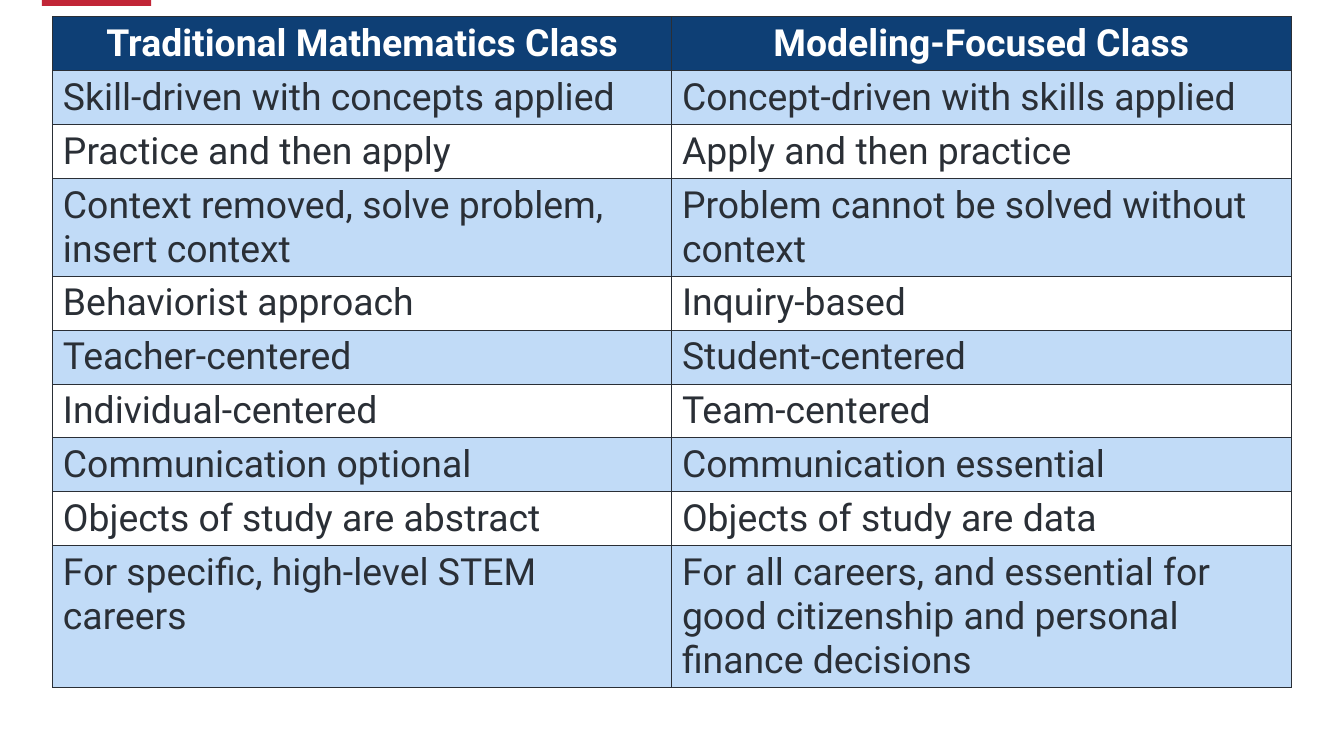
"""Build a slide comparing a traditional and a modeling-focused mathematics class."""
from dataclasses import dataclass

from lxml import etree
from pptx import Presentation
from pptx.dml.color import RGBColor
from pptx.enum.shapes import MSO_SHAPE
from pptx.enum.text import PP_ALIGN
from pptx.oxml.ns import qn
from pptx.slide import Slide
from pptx.table import _Cell
from pptx.util import Emu, Inches, Pt

RECTANGLE = MSO_SHAPE.RECTANGLE
LEFT, CENTER = PP_ALIGN.LEFT, PP_ALIGN.CENTER

SLIDE_WIDTH, SLIDE_HEIGHT = Inches(16), Inches(9)
GRID_COLUMNS, GRID_ROWS = 16, 9
FONT_NAME, FONT_SIZE, BORDER_WIDTH = "Roboto", Pt(32), Pt(1)
LINE_ROWS, MARGIN_COLUMNS, MARGIN_ROWS = 0.52, 0.12, 0.06
COLORS = {"accent": "C12637", "header": "0E3F75", "band": "C1DBF7",
          "white": "FFFFFF", "ink": "2A2F36"}


@dataclass(frozen=True)
class Area:
    left: float
    top: float
    width: float
    height: float


@dataclass(frozen=True)
class RowStyle:
    fill: str
    text: str
    bold: bool = False
    alignment: PP_ALIGN = LEFT


@dataclass(frozen=True)
class Comparison:
    traditional: str
    modeling: str
    lines: int = 1


ACCENT_AREA = Area(0.5, -0.05, 1.3, 0.12)
TABLE_LEFT, TABLE_TOP, TABLE_WIDTH = 0.63, 0.2, 14.74
HEADER_STYLE = RowStyle("header", "white", True, CENTER)
BODY_STYLES = (RowStyle("white", "ink"), RowStyle("band", "ink"))
COMPARISONS = [
    Comparison("Traditional Mathematics Class", "Modeling-Focused Class"),
    Comparison("Skill-driven with concepts applied", "Concept-driven with skills applied"),
    Comparison("Practice and then apply", "Apply and then practice"),
    Comparison("Context removed, solve problem, insert context",
               "Problem cannot be solved without context", 2),
    Comparison("Behaviorist approach", "Inquiry-based"),
    Comparison("Teacher-centered", "Student-centered"),
    Comparison("Individual-centered", "Team-centered"),
    Comparison("Communication optional", "Communication essential"),
    Comparison("Objects of study are abstract", "Objects of study are data"),
    Comparison("For specific, high-level STEM careers",
               "For all careers, and essential for good citizenship "
               "and personal finance decisions", 3),
]


def columns(count: float) -> Emu:
    return Emu(round(SLIDE_WIDTH * count / GRID_COLUMNS))


def rows(count: float) -> Emu:
    return Emu(round(SLIDE_HEIGHT * count / GRID_ROWS))


def color(name: str) -> RGBColor:
    return RGBColor.from_string(COLORS[name])


def row_height(comparison: Comparison) -> float:
    return comparison.lines * LINE_ROWS + 2 * MARGIN_ROWS


def add_accent(slide: Slide, area: Area) -> None:
    shape = slide.shapes.add_shape(RECTANGLE, columns(area.left), rows(area.top),
                                   columns(area.width), rows(area.height))
    shape.shadow.inherit = False
    shape.fill.solid()
    shape.fill.fore_color.rgb = color("accent")
    shape.line.fill.background()


def add_borders(cell: _Cell) -> None:
    properties = cell._tc.get_or_add_tcPr()
    for position, side in enumerate(("lnL", "lnR", "lnT", "lnB")):
        line = etree.Element(qn(f"a:{side}"), w=str(BORDER_WIDTH))
        fill = etree.SubElement(line, qn("a:solidFill"))
        etree.SubElement(fill, qn("a:srgbClr"), val=COLORS["ink"])
        properties.insert(position, line)


def fill_cell(cell: _Cell, text: str, style: RowStyle) -> None:
    cell.margin_left = cell.margin_right = columns(MARGIN_COLUMNS)
    cell.margin_top = cell.margin_bottom = rows(MARGIN_ROWS)
    cell.fill.solid()
    cell.fill.fore_color.rgb = color(style.fill)
    add_borders(cell)
    paragraph = cell.text_frame.paragraphs[0]
    paragraph.alignment = style.alignment
    run = paragraph.add_run()
    run.text = text
    run.font.name = FONT_NAME
    run.font.size = FONT_SIZE
    run.font.bold = style.bold
    run.font.color.rgb = color(style.text)


def add_comparison_table(slide: Slide, comparisons: list[Comparison]) -> None:
    height = sum(row_height(comparison) for comparison in comparisons)
    table = slide.shapes.add_table(len(comparisons), 2, columns(TABLE_LEFT), rows(TABLE_TOP),
                                   columns(TABLE_WIDTH), rows(height)).table
    table.horz_banding = False
    for index, comparison in enumerate(comparisons):
        table.rows[index].height = rows(row_height(comparison))
        style = BODY_STYLES[index % 2] if index else HEADER_STYLE
        for column, text in enumerate((comparison.traditional, comparison.modeling)):
            fill_cell(table.cell(index, column), text, style)


def main() -> None:
    presentation = Presentation()
    presentation.slide_width, presentation.slide_height = SLIDE_WIDTH, SLIDE_HEIGHT
    slide = presentation.slides.add_slide(presentation.slide_layouts[6])
    add_accent(slide, ACCENT_AREA)
    add_comparison_table(slide, COMPARISONS)
    presentation.save("out.pptx")


if __name__ == "__main__":
    main()
